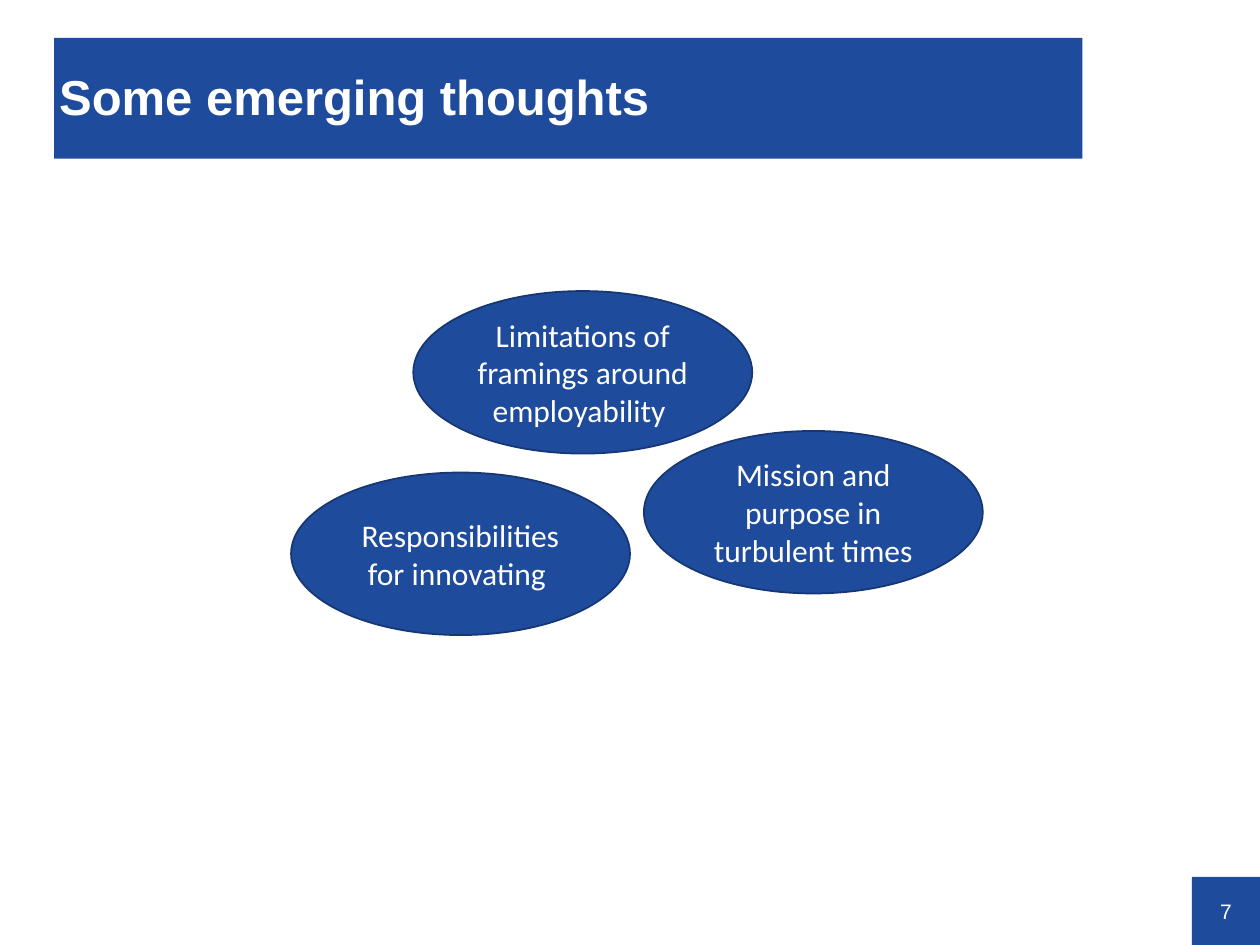
from dataclasses import dataclass

from pptx import Presentation
from pptx.dml.color import RGBColor
from pptx.enum.shapes import MSO_SHAPE
from pptx.enum.text import MSO_ANCHOR, MSO_AUTO_SIZE, PP_ALIGN
from pptx.util import Inches, Pt

LEFT, CENTER = PP_ALIGN.LEFT, PP_ALIGN.CENTER
MIDDLE = MSO_ANCHOR.MIDDLE
NO_AUTOFIT = MSO_AUTO_SIZE.NONE
RECTANGLE, OVAL = MSO_SHAPE.RECTANGLE, MSO_SHAPE.OVAL
TITLE_ONLY = 5


@dataclass(frozen=True)
class Theme:
    blue: RGBColor = RGBColor(0x1E, 0x4B, 0x9B)
    outline: RGBColor = RGBColor(0x16, 0x37, 0x73)
    white: RGBColor = RGBColor(0xFF, 0xFF, 0xFF)
    heading_font: str = "Arial"
    body_font: str = "Calibri"
    title_size: int = 28
    body_size: int = 18
    number_size: int = 12


def write_text(shape, text, *, font, size, color, bold=False, align=CENTER,
               line_spacing=None, margins=(0.1, 0.05, 0.1, 0.05)):
    """Fill a shape with one formatted paragraph; margins are in inches."""
    frame = shape.text_frame
    frame.word_wrap = True
    frame.auto_size = NO_AUTOFIT
    frame.vertical_anchor = MIDDLE
    (frame.margin_left, frame.margin_top,
     frame.margin_right, frame.margin_bottom) = map(Inches, margins)
    paragraph = frame.paragraphs[0]
    paragraph.alignment = align
    paragraph.line_spacing = line_spacing
    run = paragraph.add_run()
    run.text = text
    run.font.name = font
    run.font.size = Pt(size)
    run.font.bold = bold
    run.font.color.rgb = color


class SlideBuilder:
    def __init__(self, slide, theme):
        self.slide = slide
        self.theme = theme

    def title(self, text, left, top, width, height):
        banner = self.slide.shapes.title
        banner.left, banner.top = Inches(left), Inches(top)
        banner.width, banner.height = Inches(width), Inches(height)
        banner.fill.solid()
        banner.fill.fore_color.rgb = self.theme.blue
        write_text(banner, text, font=self.theme.heading_font,
                   size=self.theme.title_size, color=self.theme.white, bold=True,
                   align=LEFT, line_spacing=0.9, margins=(0.04, 0.02, 0, 0))

    def blue_shape(self, preset, left, top, width, height):
        shape = self.slide.shapes.add_shape(
            preset, Inches(left), Inches(top), Inches(width), Inches(height))
        shape.shadow.inherit = False
        shape.fill.solid()
        shape.fill.fore_color.rgb = self.theme.blue
        return shape

    def page_number(self, text, left, top, side):
        corner = self.blue_shape(RECTANGLE, left, top, side, side)
        corner.line.fill.background()
        write_text(corner, text, font=self.theme.heading_font,
                   size=self.theme.number_size, color=self.theme.white,
                   margins=(0, 0, 0, 0))

    def thought(self, text, left, top, width=2.69, height=1.29):
        bubble = self.blue_shape(OVAL, left, top, width, height)
        bubble.line.color.rgb = self.theme.outline
        bubble.line.width = Pt(1)
        write_text(bubble, text, font=self.theme.body_font,
                   size=self.theme.body_size, color=self.theme.white)


def main():
    deck = Presentation()
    deck.slide_width, deck.slide_height = Inches(10), Inches(7.5)
    slide = deck.slides.add_slide(deck.slide_layouts[TITLE_ONLY])
    builder = SlideBuilder(slide, Theme())

    # Page number and title banner
    builder.page_number("7", 9.46, 6.96, 0.54)
    builder.title("Some emerging thoughts", 0.43, 0.3, 8.16, 0.96)

    # Cluster of thoughts
    thoughts = [
        ("Mission and purpose in turbulent times", 5.11, 3.42),
        ("Responsibilities for innovating ", 2.31, 3.75),
        ("Limitations of framings around employability ", 3.28, 2.31),
    ]
    for text, left, top in thoughts:
        builder.thought(text, left, top)

    deck.save("out.pptx")


if __name__ == "__main__":
    main()
